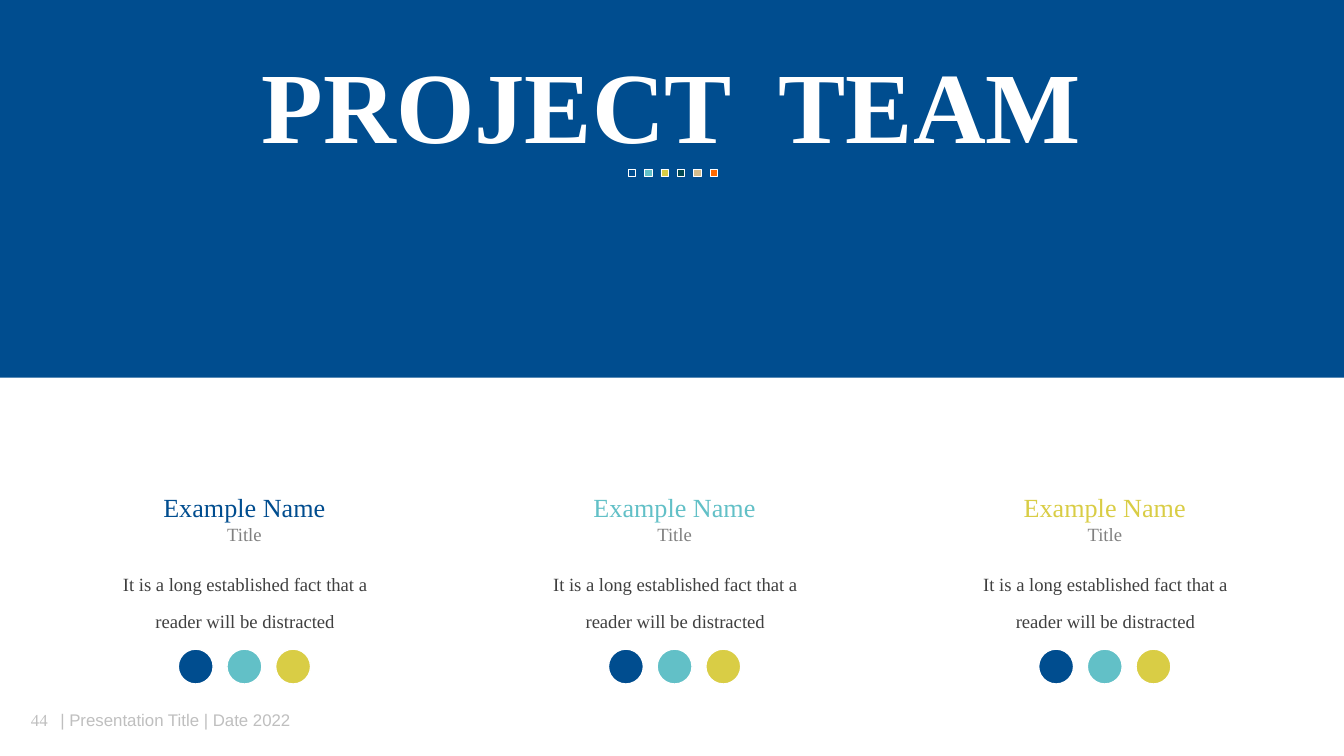
"""Build a project team slide with three member profiles."""
from pptx import Presentation
from pptx.dml.color import RGBColor
from pptx.enum.shapes import MSO_SHAPE
from pptx.enum.text import MSO_ANCHOR, PP_ALIGN
from pptx.util import Cm, Pt

RECTANGLE, OVAL = MSO_SHAPE.RECTANGLE, MSO_SHAPE.OVAL
MIDDLE = MSO_ANCHOR.MIDDLE
LEFT, CENTER = PP_ALIGN.LEFT, PP_ALIGN.CENTER

BLUE = RGBColor(0x00, 0x4D, 0x8F)
TEAL = RGBColor(0x62, 0xC0, 0xC7)
YELLOW = RGBColor(0xD9, 0xCD, 0x45)
DARK_TEAL = RGBColor(0x00, 0x48, 0x51)
SAND = RGBColor(0xD4, 0xBD, 0x8D)
ORANGE = RGBColor(0xFF, 0x69, 0x00)
WHITE = RGBColor(0xFF, 0xFF, 0xFF)
DARK_GRAY = RGBColor(0x40, 0x40, 0x40)
MID_GRAY = RGBColor(0x80, 0x80, 0x80)
LIGHT_GRAY = RGBColor(0xBF, 0xBF, 0xBF)
SERIF, SANS = "Times New Roman", "Arial"

TITLE = "PROJECT  TEAM"
PAGE_NUMBER = "44"
FOOTER = "| Presentation Title | Date 2022"
BIOGRAPHY = "It is a long established fact that a reader will be distracted"
MEMBERS = [
    ("Example Name", "Title", BIOGRAPHY, BLUE),
    ("Example Name", "Title", BIOGRAPHY, TEAL),
    ("Example Name", "Title", BIOGRAPHY, YELLOW),
]
SOCIAL_COLORS = [BLUE, TEAL, YELLOW]
SWATCH_COLORS = [BLUE, TEAL, YELLOW, DARK_TEAL, SAND, ORANGE]

SLIDE_WIDTH, SLIDE_HEIGHT = 25.4, 14.29
BAND_HEIGHT = 7.14
COLUMN_PITCH = 8.13
BADGE_SIZE, BADGE_PITCH = 0.66, 0.92
SWATCH_SIZE, SWATCH_PITCH = 0.14, 0.31


def add_filled(slide, kind, box, color, line_width=None):
    shape = slide.shapes.add_shape(kind, *map(Cm, box))
    shape.shadow.inherit = False
    shape.fill.solid()
    shape.fill.fore_color.rgb = color
    if line_width is None:
        shape.line.fill.background()
    else:
        shape.line.color.rgb = WHITE
        shape.line.width = Pt(line_width)


def add_text(slide, box, lines, align=CENTER):
    frame = slide.shapes.add_textbox(*map(Cm, box)).text_frame
    frame.word_wrap = True
    frame.vertical_anchor = MIDDLE
    frame.margin_left = frame.margin_right = 0
    frame.margin_top = frame.margin_bottom = 0
    frame.text = "\n".join(text for text, *_ in lines)
    for paragraph, (_, size, color, name) in zip(frame.paragraphs, lines):
        paragraph.alignment = align
        font = paragraph.runs[0].font
        font.size, font.name = Pt(size), name
        font.color.rgb = color
    return frame.paragraphs[0]


def add_row(slide, kind, left, top, size, pitch, colors, line_width):
    for index, color in enumerate(colors):
        box = (left + index * pitch, top, size, size)
        add_filled(slide, kind, box, color, line_width)


def add_member(slide, offset, name, role, biography, color):
    paragraph = add_text(slide, (2.03 + offset, 10.54, 5.2, 1.42),
                         [(biography, 10, DARK_GRAY, SERIF)])
    paragraph.line_spacing = Pt(20)
    add_row(slide, OVAL, 3.37 + offset, 12.27, BADGE_SIZE, BADGE_PITCH,
            SOCIAL_COLORS, 0.75)
    add_text(slide, (2.18 + offset, 9.27, 4.88, 1.04),
             [(name, 14, color, SERIF), (role, 10, MID_GRAY, SERIF)])


def main():
    presentation = Presentation()
    presentation.slide_width = Cm(SLIDE_WIDTH)
    presentation.slide_height = Cm(SLIDE_HEIGHT)
    slide = presentation.slides.add_slide(presentation.slide_layouts[6])

    add_text(slide, (0.2, 13.23, 1.09, 0.76),
             [(PAGE_NUMBER, 9, LIGHT_GRAY, SERIF)])
    add_text(slide, (1.14, 13.41, 5.08, 0.38),
             [(FOOTER, 9, LIGHT_GRAY, SANS)], LEFT)
    add_filled(slide, RECTANGLE, (0, 0, SLIDE_WIDTH, BAND_HEIGHT), BLUE)

    for index, member in enumerate(MEMBERS):
        add_member(slide, index * COLUMN_PITCH, *member)

    title = add_text(slide, (0.58, 0.79, 24.23, 2.31),
                     [(TITLE, 54, WHITE, SERIF)])
    title.space_after = Pt(6)
    title.runs[0].font.bold = True
    add_row(slide, RECTANGLE, 11.87, 3.2, SWATCH_SIZE, SWATCH_PITCH,
            SWATCH_COLORS, 0.25)

    presentation.save("out.pptx")


if __name__ == "__main__":
    main()
